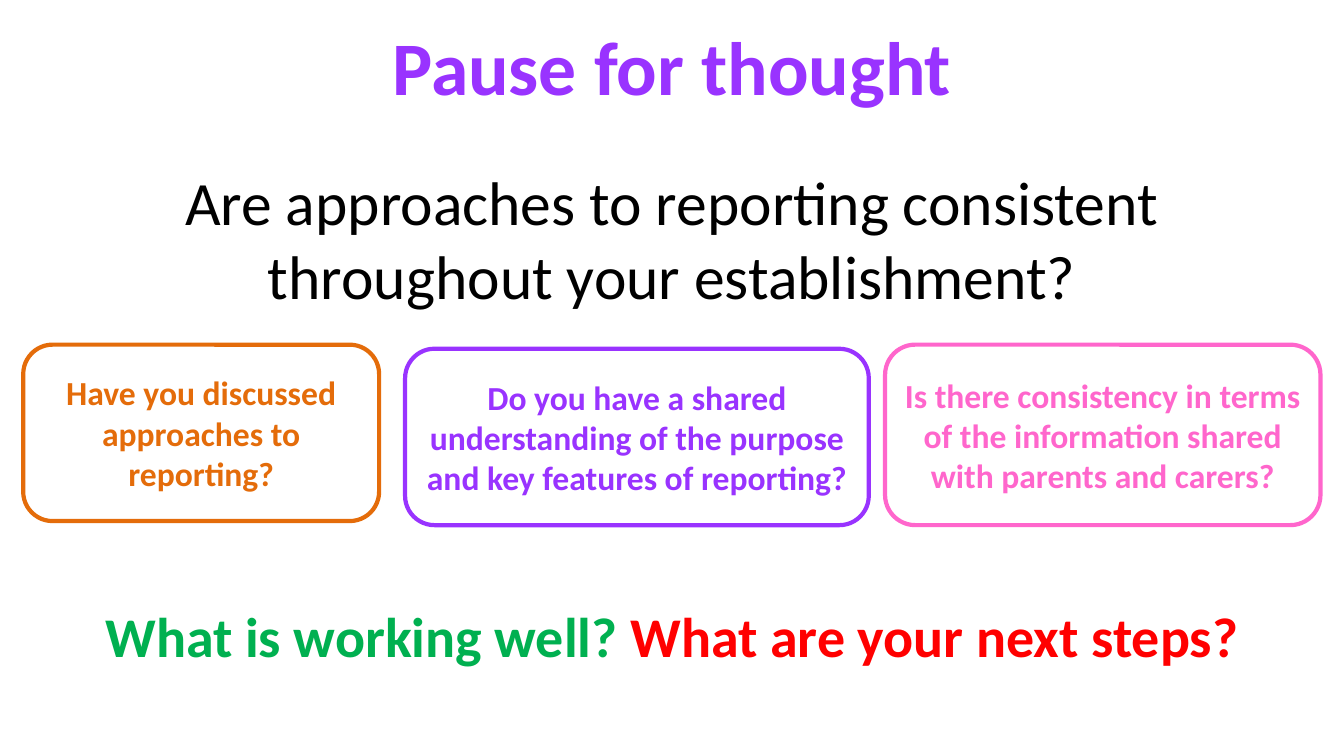
import pptx
import pptx.util
import pptx.dml.color
import pptx.enum.shapes
import pptx.enum.text

Pt = pptx.util.Pt
COLORS = {
    "purple": "9933FF",
    "black": "000000",
    "pink": "FF66CC",
    "orange": "E46C0A",
    "green": "00B050",
    "red": "FF0000",
}


def rgb(color):
    return pptx.dml.color.RGBColor.from_string(COLORS[color])


class ReflectionSlide:
    font_name = "Calibri"
    outline_width = 3

    def __init__(self, slide):
        self.slide = slide

    def add_wording(self, frame, runs, size, bold):
        frame.word_wrap = True
        paragraph = frame.paragraphs[0]
        paragraph.alignment = pptx.enum.text.PP_ALIGN.CENTER
        style = {"name": self.font_name, "size": Pt(size), "bold": bold}
        for wording, color in runs:
            run = paragraph.add_run()
            run.text = wording
            for attribute, value in style.items():
                setattr(run.font, attribute, value)
            run.font.color.rgb = rgb(color)

    def text(self, bounds, runs, size, bold=True):
        box = self.slide.shapes.add_textbox(*map(Pt, bounds))
        box.text_frame.auto_size = pptx.enum.text.MSO_AUTO_SIZE.SHAPE_TO_FIT_TEXT
        self.add_wording(box.text_frame, runs, size, bold)

    def card(self, bounds, question, color):
        card = self.slide.shapes.add_shape(
            pptx.enum.shapes.MSO_SHAPE.ROUNDED_RECTANGLE, *map(Pt, bounds)
        )
        card.shadow.inherit = False
        card.fill.background()
        card.line.color.rgb = rgb(color)
        card.line.width = Pt(self.outline_width)
        card.text_frame.vertical_anchor = pptx.enum.text.MSO_ANCHOR.MIDDLE
        self.add_wording(card.text_frame, [(question, color)], 24, True)


def main():
    deck = pptx.Presentation()
    deck.slide_width, deck.slide_height = Pt(960), Pt(540)
    pause = ReflectionSlide(deck.slides.add_slide(deck.slide_layouts[6]))

    pause.text((0, 10.8, 960, 72.7), [("Pause for thought", "purple")], 54)
    main_question = "Are approaches to reporting consistent throughout your establishment?"
    pause.text((104.4, 113.8, 751.7, 113.8), [(main_question, "black")], 44, bold=False)

    prompts = [
        ((632.2, 246.2, 311, 128.9), "pink",
         "Is there consistency in terms of the information shared with parents and carers?"),
        ((16.6, 246.2, 254.2, 126), "orange",
         "Have you discussed approaches to reporting?"),
        ((289.4, 249.1, 331.2, 126), "purple",
         "Do you have a shared understanding of the purpose and key features of reporting?"),
    ]
    for bounds, color, question in prompts:
        pause.card(bounds, question, color)

    closing = [("What is working well? ", "green"), ("What are your next steps?", "red")]
    pause.text((16.6, 426.2, 926.6, 55.4), closing, 40)
    deck.save("out.pptx")


if __name__ == "__main__":
    main()
